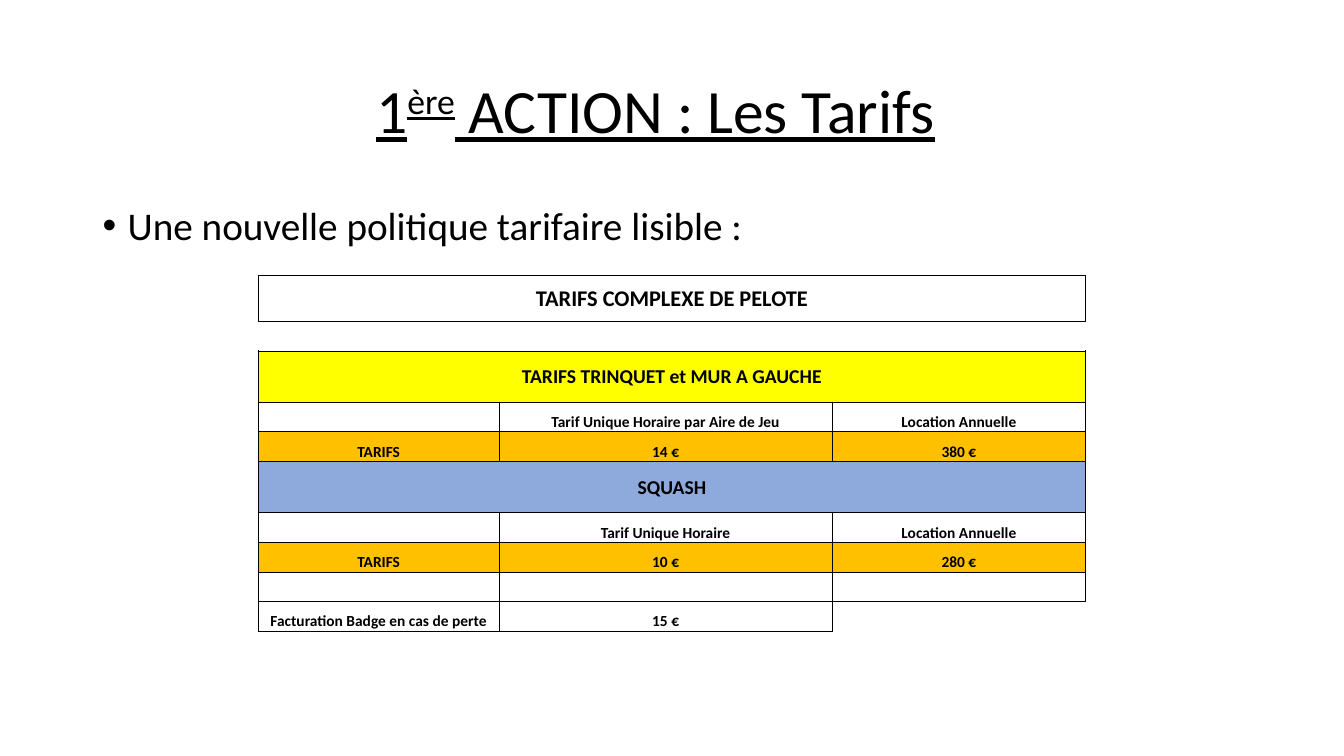
from lxml import etree
from pptx import Presentation
from pptx.dml.color import RGBColor
from pptx.enum.text import MSO_ANCHOR, MSO_AUTO_SIZE, PP_ALIGN
from pptx.oxml.ns import qn
from pptx.util import Pt

MID, LOW, TOP = MSO_ANCHOR.MIDDLE, MSO_ANCHOR.BOTTOM, MSO_ANCHOR.TOP
LEFT, CENTER = PP_ALIGN.LEFT, PP_ALIGN.CENTER
FIXED = MSO_AUTO_SIZE.NONE
FONT = "Calibri"
HUES = {"ink": "000000", "yellow": "FFFF00", "orange": "FFC000", "blue": "8EA9DB"}
COLS = (172, 238, 181)
ROWS = [
    (32.8, 16, None, ["TARIFS COMPLEXE DE PELOTE"]),
    (21.2, 11, None, ["", "", ""]),
    (36.6, 14, "yellow", ["TARIFS TRINQUET et MUR A GAUCHE"]),
    (21.2, 11, None, ["", "Tarif Unique Horaire par Aire de Jeu", "Location Annuelle"]),
    (21.2, 11, "orange", ["TARIFS", "14 €", "380 €"]),
    (36.6, 14, "blue", ["SQUASH"]),
    (21.2, 11, None, ["", "Tarif Unique Horaire", "Location Annuelle"]),
    (21.2, 11, "orange", ["TARIFS", "10 €", "280 €"]),
    (21.2, 11, None, ["", "", ""]),
    (21.2, 11, None, ["Facturation Badge en cas de perte", "15 €", ""]),
]
SIDES = {(1, 0): "TB", (1, 1): "TB", (1, 2): "TB", (9, 2): "LT"}


def place(shape, box):
    """Move a shape to a box given in points."""
    shape.left, shape.top, shape.width, shape.height = map(Pt, box)


def style(run, size, bold=False):
    """Set the face, size and colour of a run."""
    font = run.font
    font.name, font.size, font.bold = FONT, Pt(size), bold
    font.color.rgb = RGBColor.from_string(HUES["ink"])


def add_title(slide, box):
    """Fill the title placeholder with underlined text."""
    title = slide.shapes.title
    place(title, box)
    frame = title.text_frame
    frame.vertical_anchor, frame.auto_size = MID, FIXED
    para = frame.paragraphs[0]
    para.alignment, para.line_spacing = LEFT, 0.9
    for text, base in (("1", 0), ("ère", 30000), (" ACTION : Les Tarifs", 0)):
        run = para.add_run()
        run.text = text
        style(run, 44)
        run.font.underline = True
        if base:
            run.font._element.set("baseline", str(base))


def add_point(slide, box):
    """Write the bulleted line."""
    shape = slide.shapes.add_textbox(*map(Pt, box))
    frame = shape.text_frame
    frame.word_wrap, frame.vertical_anchor = True, TOP
    para = frame.paragraphs[0]
    para.text = "Une nouvelle politique tarifaire lisible :"
    props = para._p.get_or_add_pPr()
    props.set("marL", str(Pt(18)))
    props.set("indent", str(-Pt(18)))
    etree.SubElement(props, qn("a:buFont"), typeface="Arial")
    etree.SubElement(props, qn("a:buChar"), char="•")
    para.line_spacing = 0.9
    style(para.runs[0], 28)


def set_edges(cell, sides):
    """Draw thin lines on the named sides and none on the others."""
    props = cell._tc.get_or_add_tcPr()
    for side in "LRTB":
        line = etree.SubElement(props, qn("a:ln" + side), w=str(Pt(0.5)))
        if side in sides:
            fill = etree.SubElement(line, qn("a:solidFill"))
            etree.SubElement(fill, qn("a:srgbClr"), val=HUES["ink"])
        else:
            etree.SubElement(line, qn("a:noFill"))


def fill_cell(cell, text, size, hue, sides):
    """Write, align, line and fill one cell."""
    cell.margin_left = cell.margin_right = cell.margin_top = Pt(0.7)
    cell.margin_bottom = 0
    cell.vertical_anchor = LOW if size == 11 else MID
    para = cell.text_frame.paragraphs[0]
    para.alignment = CENTER
    if text:
        para.text = text
        style(para.runs[0], size, True)
    else:
        etree.SubElement(para._p, qn("a:endParaRPr"), sz=str(size * 100))
    set_edges(cell, sides)
    if hue:
        cell.fill.solid()
        cell.fill.fore_color.rgb = RGBColor.from_string(HUES[hue])
    else:
        cell.fill.background()


def add_rates(slide, left, top):
    """Build the table of rates from its top left corner."""
    high = sum(row[0] for row in ROWS)
    size = (left, top, sum(COLS), high)
    table = slide.shapes.add_table(len(ROWS), len(COLS), *map(Pt, size)).table
    table.first_row = table.horz_banding = False
    for col, width in zip(table.columns, COLS):
        col.width = Pt(width)
    for r, (high, size, hue, texts) in enumerate(ROWS):
        table.rows[r].height = Pt(high)
        if len(texts) == 1:
            table.cell(r, 0).merge(table.cell(r, 2))
            texts = texts + ["", ""]
        for c, text in enumerate(texts):
            fill_cell(table.cell(r, c), text, size, hue, SIDES.get((r, c), "LRTB"))


def main():
    """Build and save the slide."""
    deck = Presentation()
    deck.slide_width, deck.slide_height = Pt(960), Pt(540)
    slide = deck.slides.add_slide(deck.slide_layouts[5])
    add_title(slide, (261.4, 28.8, 632, 104.4))
    add_point(slide, (66.2, 144, 828, 342.7))
    add_rates(slide, 184.5, 196.6)
    deck.save("out.pptx")


if __name__ == "__main__":
    main()
